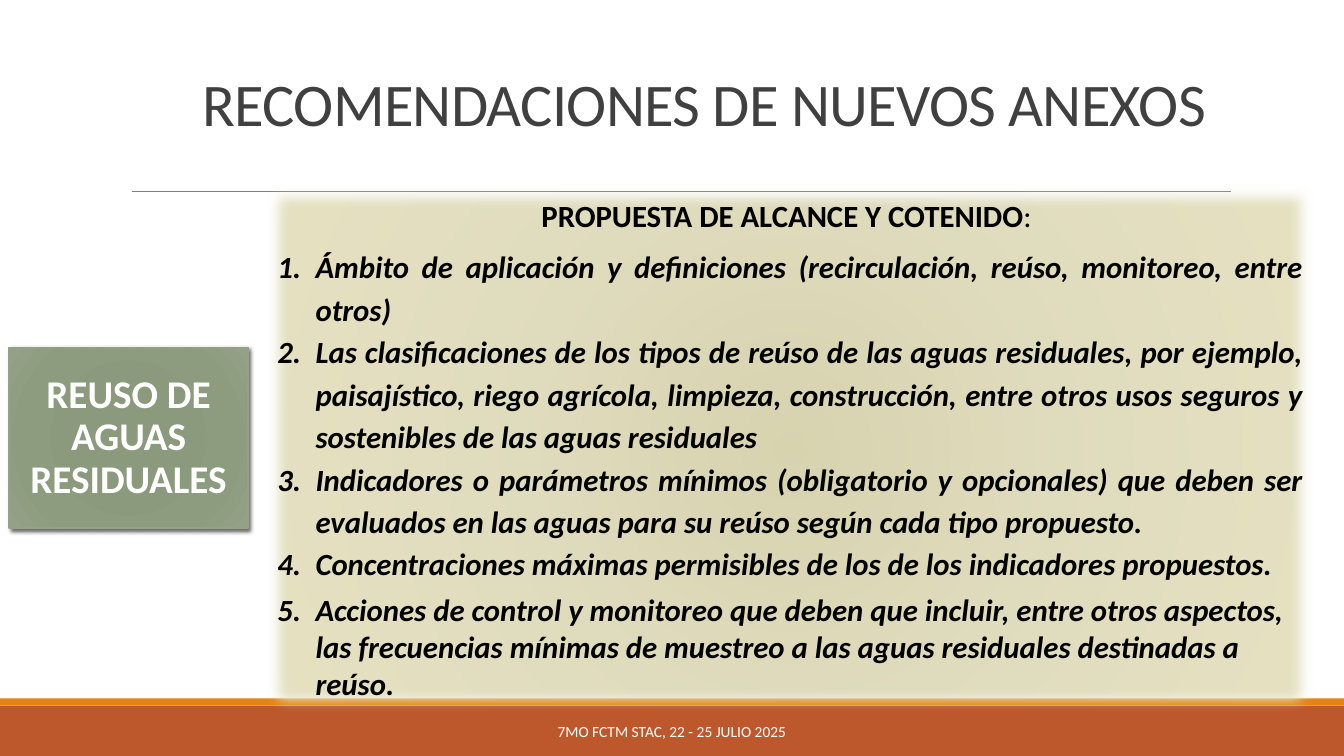
from lxml.etree import SubElement
from pptx import Presentation
from pptx.dml.color import RGBColor
from pptx.enum.shapes import MSO_CONNECTOR, MSO_SHAPE
from pptx.enum.text import MSO_ANCHOR, MSO_AUTO_SIZE, PP_ALIGN
from pptx.oxml import parse_xml
from pptx.oxml.ns import qn
from pptx.util import Inches, Pt

RUST = RGBColor(0xBD, 0x58, 0x2C)
ORANGE = RGBColor(0xE4, 0x83, 0x12)
GRAY = RGBColor(0x80, 0x80, 0x80)
DARK = RGBColor(0x40, 0x40, 0x40)
SAGE = RGBColor(0x94, 0xA0, 0x88)
BLACK = RGBColor(0, 0, 0)
WHITE = RGBColor(0xFF, 0xFF, 0xFF)
SAND_STOPS = [(0, "D7D3AF"), (45, "DFDBBD"), (100, "E5E1C1")]
SAGE_STOPS = [(0, "8A987B"), (34, "8B997D"), (70, "8D9C7E"), (100, "94A187")]
NS = 'xmlns:a="http://schemas.openxmlformats.org/drawingml/2006/main"'

TOPICS = [
    "Ámbito de aplicación y definiciones (recirculación, reúso, monitoreo, entre otros)",
    "Las clasificaciones de los tipos de reúso de las aguas residuales, por ejemplo, "
    "paisajístico, riego agrícola, limpieza, construcción, entre otros usos seguros y "
    "sostenibles de las aguas residuales",
    "Indicadores o parámetros mínimos (obligatorio y opcionales) que deben ser "
    "evaluados en las aguas para su reúso según cada tipo propuesto.",
    "Concentraciones máximas permisibles de los de los indicadores propuestos.",
    "Acciones de control y monitoreo que deben que incluir, entre otros aspectos, las "
    "frecuencias mínimas de muestreo a las aguas residuales destinadas a reúso.",
]


class Deck:
    font = "Calibri"

    def __init__(self):
        self.prs = Presentation()
        self.prs.slide_width, self.prs.slide_height = Inches(13.33), Inches(7.5)
        self.slide = self.prs.slides.add_slide(self.prs.slide_layouts[1])
        self.shapes = self.slide.shapes

    def rect(self, box, color):
        shape = self.shapes.add_shape(MSO_SHAPE.RECTANGLE, *map(Inches, box))
        shape.shadow.inherit = False
        shape.fill.solid()
        shape.fill.fore_color.rgb = color
        shape.line.fill.background()
        return shape

    def rule(self, left, right, top):
        line = self.shapes.add_connector(
            MSO_CONNECTOR.STRAIGHT, Inches(left), Inches(top), Inches(right), Inches(top))
        line.line.color.rgb = GRAY
        line.line.width = Pt(0.5)
        SubElement(line._element.spPr, qn("a:effectLst"))

    def place(self, shape, box):
        """Move a placeholder to its box and in front of what is drawn so far."""
        shape.left, shape.top, shape.width, shape.height = map(Inches, box)
        self.shapes._spTree.append(shape._element)
        return shape

    def frame(self, shape, anchor):
        frame = shape.text_frame
        frame.word_wrap = True
        frame.auto_size = MSO_AUTO_SIZE.NONE
        frame.vertical_anchor = anchor
        return frame

    def run(self, para, text, size, color, bold=False, italic=False):
        run = para.add_run()
        run.text = text
        font = run.font
        font.name, font.size, font.color.rgb = self.font, Pt(size), color
        font.bold, font.italic = bold, italic
        return run

    def style(self, para, align, pitch=1.0, after=0):
        para.alignment = align
        para.line_spacing = pitch
        para.space_before, para.space_after = Pt(0), Pt(after)

    def bullet(self, para, indent, kind, **attrs):
        props = para._p.get_or_add_pPr()
        props.set("marL", str(Inches(indent)))
        props.set("indent", str(-Inches(indent)))
        SubElement(props, qn(kind), attrs)

    def glow(self, shape, stops):
        """Fill a shape with a gradient that spreads from its lower right corner."""
        marks = "".join(f'<a:gs pos="{pos * 1000}"><a:srgbClr val="{color}"/></a:gs>'
                        for pos, color in stops)
        shape.fill.solid()
        solid = shape._element.spPr.find(qn("a:solidFill"))
        solid.getparent().replace(solid, parse_xml(
            f'<a:gradFill {NS} rotWithShape="1"><a:gsLst>{marks}</a:gsLst><a:path path="circle">'
            '<a:fillToRect l="50000" t="50000" r="50000" b="50000"/></a:path></a:gradFill>'))

    def effect(self, shape, xml):
        shape.shadow.inherit = False
        shape._element.spPr.find(qn("a:effectLst")).append(parse_xml(xml))


def main():
    deck = Deck()
    deck.rect((0, 7, 13.33, 0.5), RUST)
    deck.rect((0, 6.93, 13.33, 0.07), ORANGE)
    deck.rule(1.31, 12.21, 1.9)

    foot = deck.shapes.add_textbox(*map(Inches, (4.03, 7.06, 5.27, 0.4)))
    para = deck.frame(foot, MSO_ANCHOR.MIDDLE).paragraphs[0]
    deck.style(para, PP_ALIGN.CENTER)
    deck.run(para, "7MO FCTM STAC, 22 - 25 JULIO 2025", 11, WHITE)

    title = deck.place(deck.shapes.title, (1.19, 0.53, 11.59, 0.9))
    para = deck.frame(title, MSO_ANCHOR.BOTTOM).paragraphs[0]
    deck.style(para, PP_ALIGN.CENTER, 0.85)
    run = deck.run(para, "RECOMENDACIONES DE NUEVOS ANEXOS", 43.2, DARK)
    run.font._element.set("spc", "-50")

    panel = deck.place(deck.slide.placeholders[1], (2.65, 1.85, 10.37, 5.21))
    deck.glow(panel, SAND_STOPS)
    deck.effect(panel, f'<a:softEdge {NS} rad="{Inches(0.12)}"/>')
    frame = deck.frame(panel, MSO_ANCHOR.TOP)
    para = frame.paragraphs[0]
    deck.style(para, PP_ALIGN.CENTER, 1.15, 6)
    deck.bullet(para, 0, "a:buNone")
    deck.run(para, "PROPUESTA DE ALCANCE Y COTENIDO", 22, BLACK, bold=True)
    deck.run(para, ": ", 22, BLACK)
    last = len(TOPICS) - 1
    for i, topic in enumerate(TOPICS):
        para = frame.add_paragraph()
        if i == last:
            deck.style(para, PP_ALIGN.LEFT)
        else:
            deck.style(para, PP_ALIGN.JUSTIFY, 1.15, 6 if i == last - 1 else 0)
        deck.bullet(para, 0.38, "a:buAutoNum", type="arabicPeriod")
        deck.run(para, topic, 22, BLACK, bold=True, italic=True)

    card = deck.rect((0.09, 3.45, 2.37, 1.79), SAGE)
    deck.glow(card, SAGE_STOPS)
    card.line.color.rgb = SAGE
    card.line.width = Pt(1)
    deck.effect(card, f'<a:outerShdw {NS} blurRad="{Pt(3)}" dist="{Pt(2)}" dir="2700000">'
                '<a:srgbClr val="000000"><a:alpha val="60000"/></a:srgbClr></a:outerShdw>')
    frame = deck.frame(card, MSO_ANCHOR.MIDDLE)
    frame.margin_left = frame.margin_right = Inches(0.16)
    frame.margin_top = frame.margin_bottom = Inches(0.09)
    para = frame.paragraphs[0]
    deck.style(para, PP_ALIGN.CENTER, 0.9)
    deck.run(para, "REUSO DE AGUAS RESIDUALES", 28, WHITE, bold=True)

    deck.prs.save("out.pptx")


if __name__ == "__main__":
    main()
